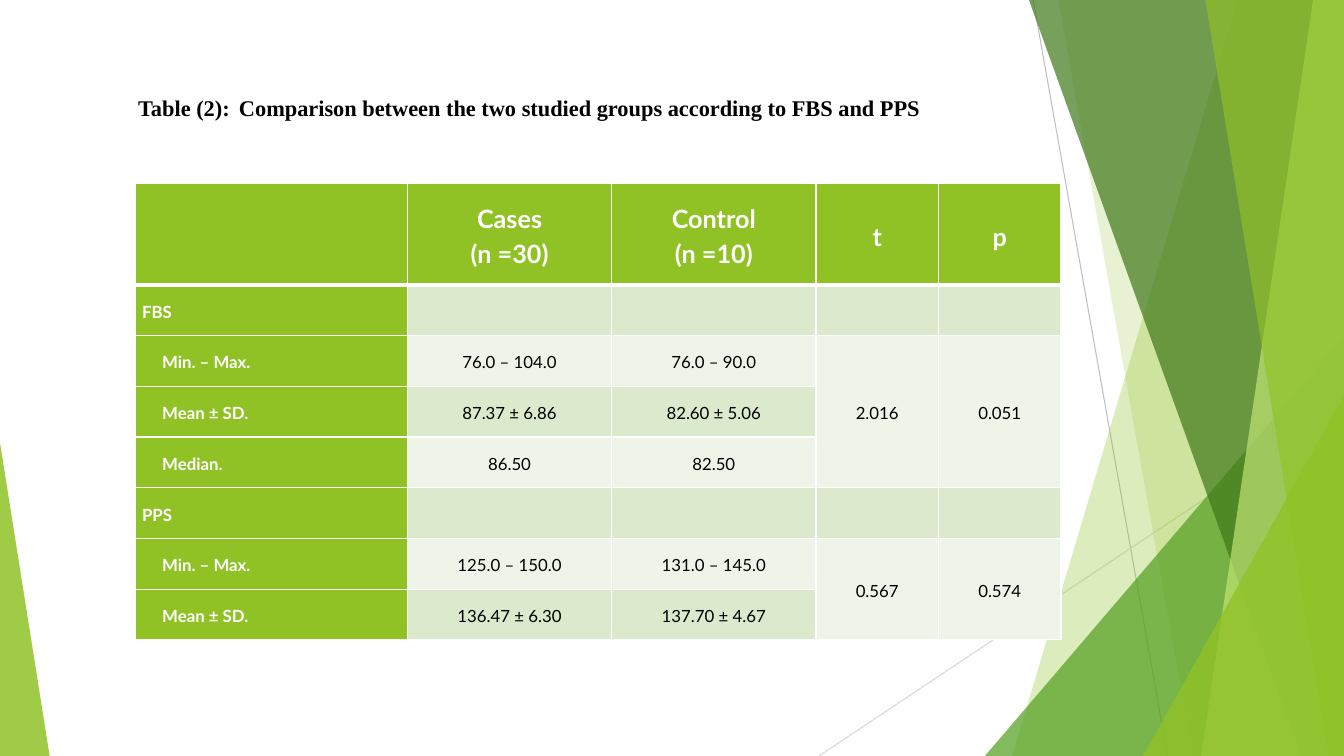
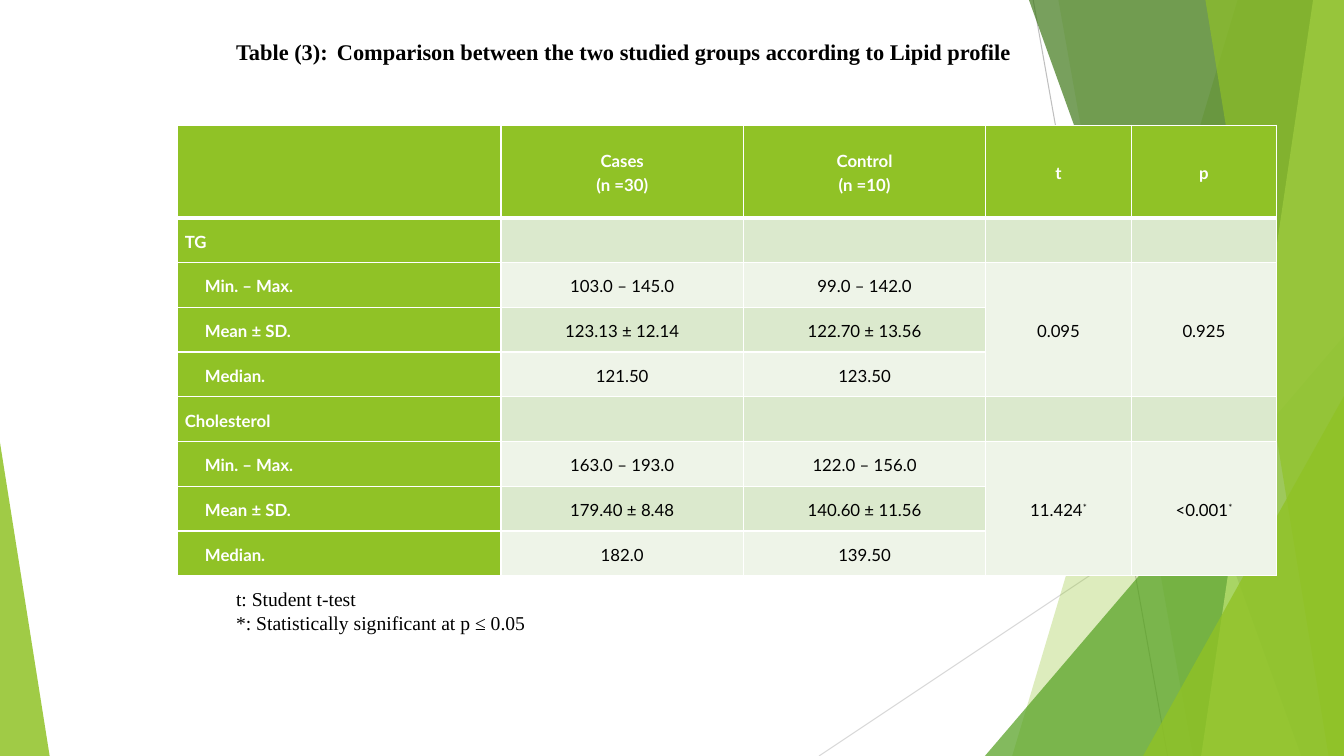
import pptx
import pptx.dml.color
import pptx.enum.shapes
import pptx.enum.text
import pptx.oxml.ns
import pptx.util
from lxml import etree

Pt = pptx.util.Pt
qn = pptx.oxml.ns.qn
ALIGN = pptx.enum.text.PP_ALIGN
MIDDLE = pptx.enum.text.MSO_ANCHOR.MIDDLE

WIDTH, HEIGHT = 960, 540
COLORS = {
    "white": "FFFFFF", "black": "000000", "lime": "90C226", "green": "54A021",
    "forest": "3F7819", "pale": "C0E474", "stripe": "DBE9CD", "light": "EEF4E8",
    "gray": "BFBFBF", "silver": "D9D9D9",
}
SERIF, SANS = "Times New Roman", "Lato"
HEADINGS = ["", "Cases\n(n =30)", "Control\n(n =10)", "t", "p"]
COLUMN_SHARES = [20, 15, 15, 9, 9]


def rgb(name):
    return pptx.dml.color.RGBColor.from_string(COLORS[name])


def write(frame, text, first=True, size=12, font=SANS, color="black", bold=False,
          align=ALIGN.LEFT, spacing=None, before=0, after=0):
    """Write one paragraph; a final * after a figure is raised."""
    paragraph = frame.paragraphs[0] if first else frame.add_paragraph()
    figure = text.removesuffix("*")
    paragraph.text = figure
    if figure != text:
        star = paragraph.add_run()
        star.text = "*"
        star.font.fill.solid()
        star.font._element.set("baseline", "30000")
    paragraph.alignment = align
    paragraph.line_spacing = spacing
    paragraph.space_before, paragraph.space_after = Pt(before), Pt(after)
    for run in paragraph.runs:
        run.font.size, run.font.name, run.font.bold = Pt(size), font, bold
        run.font.color.rgb = rgb(color)


def set_borders(cell, **widths):
    """Draw white borders; widths are points by side: L, R, T, B."""
    properties = cell._tc.get_or_add_tcPr()
    for side, width in widths.items():
        border = etree.SubElement(properties, qn(f"a:ln{side}"), w=str(Pt(width)))
        paint = etree.SubElement(border, qn("a:solidFill"))
        etree.SubElement(paint, qn("a:srgbClr"), val=COLORS["white"])


class Deck:
    def __init__(self):
        self.presentation = pptx.Presentation()
        self.presentation.slide_width = Pt(WIDTH)
        self.presentation.slide_height = Pt(HEIGHT)
        self.layout = self.presentation.slide_layouts[5]
        self.slide = None

    def new_slide(self):
        self.slide = self.presentation.slides.add_slide(self.layout)

    def paint(self, shape, color, opacity):
        shape.shadow.inherit = False
        shape.line.fill.background()
        shape.fill.solid()
        shape.fill.fore_color.rgb = rgb(color)
        tint = shape.element.spPr.find(f"{qn('a:solidFill')}/{qn('a:srgbClr')}")
        etree.SubElement(tint, qn("a:alpha"), val=str(opacity * 1000))

    def ray(self, group, start, end, color):
        line = group.shapes.add_connector(
            pptx.enum.shapes.MSO_CONNECTOR.STRAIGHT, *map(Pt, start + end))
        line.line.color.rgb = rgb(color)
        line.line.width = Pt(0.75)
        etree.SubElement(line.element.spPr, qn("a:effectLst"))

    def band(self, group, top_x, bottom_x, color, opacity):
        """Fill from a slanted left edge to the right edge of the slide."""
        outline = group.shapes.build_freeform(Pt(top_x), 0)
        corners = [(WIDTH, 0), (WIDTH, HEIGHT), (bottom_x, HEIGHT)]
        outline.add_line_segments([(Pt(x), Pt(y)) for x, y in corners])
        self.paint(outline.convert_to_shape(), color, opacity)

    def corner(self, group, left, top, width, apex, color, opacity):
        """Stand a triangle on the bottom edge, apex at 0 (left) or 1 (right)."""
        triangle = group.shapes.add_shape(
            pptx.enum.shapes.MSO_SHAPE.ISOSCELES_TRIANGLE,
            Pt(left), Pt(top), Pt(width), Pt(HEIGHT - top))
        triangle.adjustments[0] = apex
        self.paint(triangle, color, opacity)

    def decorate_layout(self):
        """Draw the facets on the current slide, then move them to its layout."""
        facets = self.slide.shapes.add_group_shape()
        self.ray(facets, (738, 0), (834, HEIGHT), "gray")
        self.ray(facets, (WIDTH, 290), (585, HEIGHT), "silver")
        self.band(facets, 884, 723, "lime", 30)
        self.band(facets, 756, 852, "lime", 20)
        self.corner(facets, 703.5, 240, 256.5, 1, "green", 72)
        self.band(facets, 735, 929.5, "forest", 70)
        self.band(facets, 938, 858, "pale", 70)
        self.band(facets, 861, 949, "lime", 65)
        self.corner(facets, 816.5, 283, 143.5, 1, "lime", 80)
        self.corner(facets, 0, 316, 35.5, 0, "lime", 85)
        for number, label in enumerate(facets.element.iter(qn("p:cNvPr")), 100):
            label.set("id", str(number))
        self.layout.shapes.element.append(facets.element)

    def title(self, text, left, top, width):
        heading = self.slide.shapes.title
        heading.left, heading.top = Pt(left), Pt(top)
        heading.width, heading.height = Pt(width), Pt(40)
        frame = heading.text_frame
        frame.auto_size = pptx.enum.text.MSO_AUTO_SIZE.NONE
        frame.word_wrap, frame.vertical_anchor = True, MIDDLE
        write(frame, text, size=16, font=SERIF, bold=True)

    def notes(self, lines, left, top, width):
        box = self.slide.shapes.add_textbox(Pt(left), Pt(top), Pt(width), Pt(17 * len(lines)))
        frame = box.text_frame
        frame.word_wrap = True
        frame.margin_top = frame.margin_bottom = 0
        for index, line in enumerate(lines):
            write(frame, line, first=index == 0, size=14, font=SERIF, spacing=Pt(17))

    def cell(self, cell, text, fill, top=1, bottom=1, indent=0, **style):
        set_borders(cell, L=1, R=1, T=top, B=bottom)
        cell.fill.solid()
        cell.fill.fore_color.rgb = rgb(fill)
        cell.vertical_anchor = MIDDLE
        cell.margin_left, cell.margin_right = Pt(5 + indent), Pt(5)
        cell.margin_top = cell.margin_bottom = 0
        write(cell.text_frame, text, spacing=1.15, before=4, after=2, **style)

    def comparison(self, groups, left, top, width, header_height, row_height, header_size):
        """Tabulate groups of (name, measures, t, p); t and p span the measures."""
        rows = [HEADINGS]
        spans = []
        for name, measures, t, p in groups:
            rows.append([name, "", "", "", ""])
            spans.append((len(rows), len(rows) + len(measures) - 1))
            for index, measure in enumerate(measures):
                rows.append([*measure, *((t, p) if index == 0 else ("", ""))])
        names = {group[0] for group in groups}

        table = self.slide.shapes.add_table(
            len(rows), len(HEADINGS), Pt(left), Pt(top), Pt(width),
            Pt(header_height + row_height * (len(rows) - 1))).table
        for column, share in zip(table.columns, COLUMN_SHARES):
            column.width = Pt(width * share / sum(COLUMN_SHARES))
        for r, row in enumerate(rows):
            table.rows[r].height = Pt(row_height if r else header_height)
            for c, text in enumerate(row):
                cell = table.cell(r, c)
                if r == 0:
                    self.cell(cell, text, "lime", bottom=3, size=header_size,
                              color="white", bold=True, align=ALIGN.CENTER)
                elif c == 0:
                    self.cell(cell, text, "lime", top=3 if r == 1 else 1, color="white",
                              bold=True, indent=0 if text in names else 14.4)
                else:
                    self.cell(cell, text, "stripe" if r % 2 else "light",
                              top=3 if r == 1 else 1, align=ALIGN.CENTER)
        for start, end in spans:
            for c in (3, 4):
                table.cell(start, c).merge(table.cell(end, c))


def main():
    deck = Deck()

    deck.new_slide()
    deck.decorate_layout()
    deck.title("Table (2):\tComparison between the two studied groups according to FBS and PPS",
               91.5, 57, 680)
    deck.comparison([
        ("FBS", [("Min. – Max.", "76.0 – 104.0", "76.0 – 90.0"),
                 ("Mean ± SD.", "87.37 ± 6.86", "82.60 ± 5.06"),
                 ("Median.", "86.50", "82.50")], "2.016", "0.051"),
        ("PPS", [("Min. – Max.", "125.0 – 150.0", "131.0 – 145.0"),
                 ("Mean ± SD.", "136.47 ± 6.30", "137.70 ± 4.67")], "0.567", "0.574"),
    ], left=96.5, top=131, width=661.5, header_height=72.5, row_height=36.25, header_size=18)

    deck.new_slide()
    deck.title("Table (3):\tComparison between the two studied groups according to Lipid profile",
               161.5, 17, 600)
    deck.comparison([
        ("TG", [("Min. – Max.", "103.0 – 145.0", "99.0 – 142.0"),
                ("Mean ± SD.", "123.13 ± 12.14", "122.70 ± 13.56"),
                ("Median.", "121.50", "123.50")], "0.095", "0.925"),
        ("Cholesterol", [("Min. – Max.", "163.0 – 193.0", "122.0 – 156.0"),
                         ("Mean ± SD.", "179.40 ± 8.48", "140.60 ± 11.56"),
                         ("Median.", "182.0", "139.50")], "11.424*", "<0.001*"),
    ], left=127, top=89.5, width=785, header_height=66, row_height=32, header_size=12)
    deck.notes(["t: Student t-test", "*: Statistically significant at p ≤ 0.05"],
               161.5, 419, 578)

    deck.presentation.save("out.pptx")


if __name__ == "__main__":
    main()
